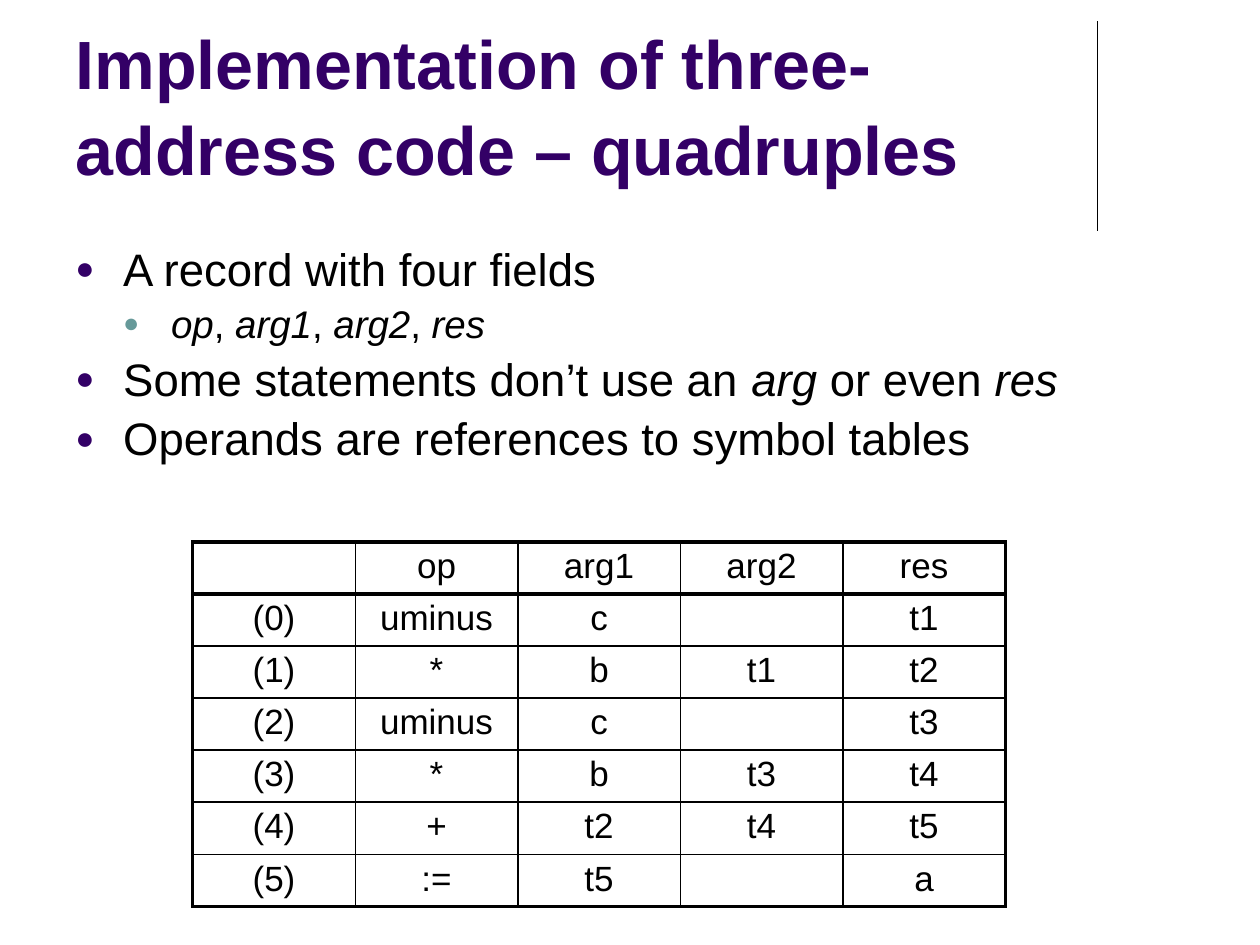
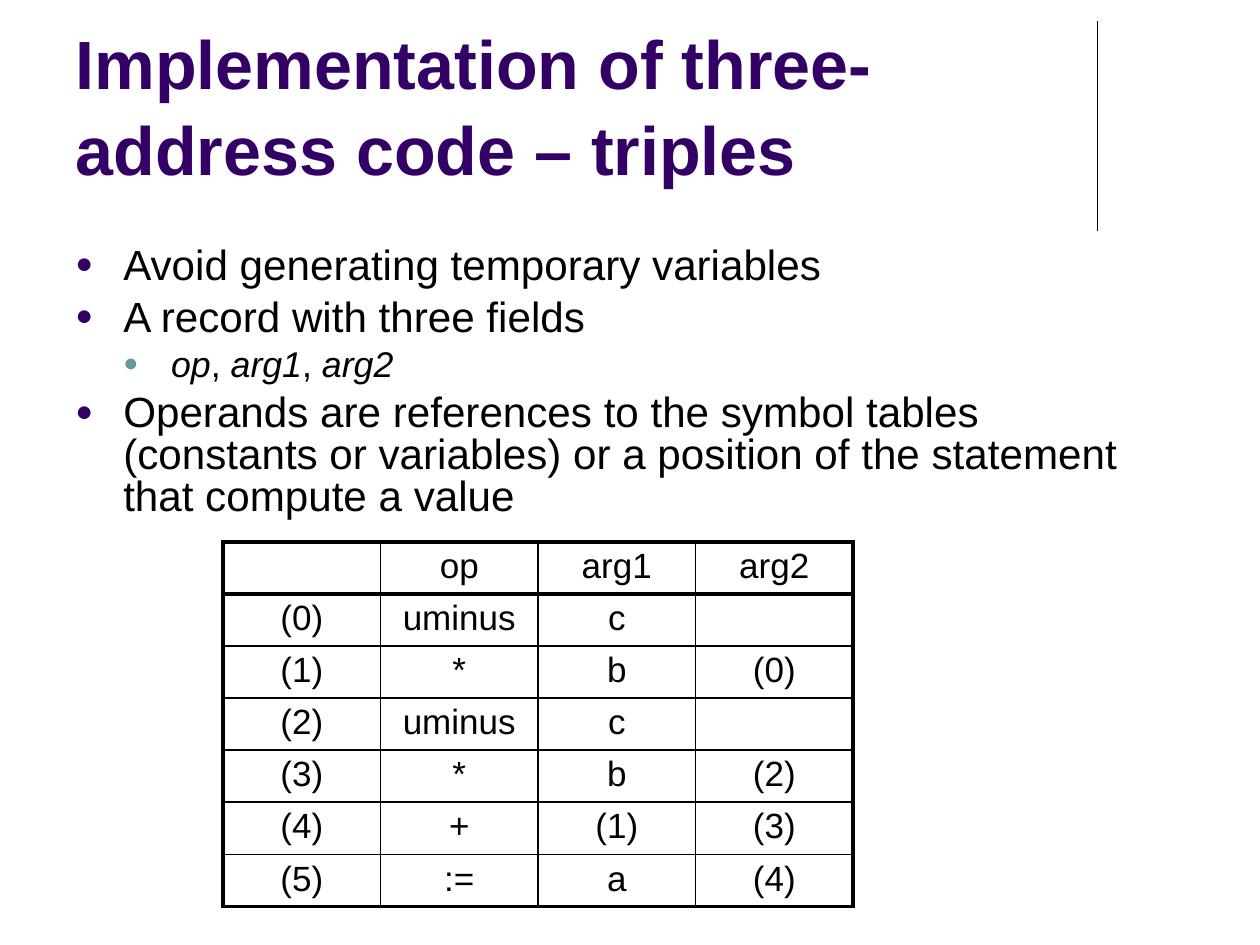
import pptx
import pptx.util
import pptx.dml.color
import pptx.enum.shapes
import pptx.enum.text
import lxml.etree

Inches = pptx.util.Inches
Pt = pptx.util.Pt
Align = pptx.enum.text.PP_ALIGN
Anchor = pptx.enum.text.MSO_ANCHOR
Fit = pptx.enum.text.MSO_AUTO_SIZE

FONT = "Arial"
INK = {"title": "330066", "text": "000000", "dots": ["330066", "669999"]}
THIN, THICK = 1, 2.25
ROW = 0.41

pages = [
    {
        "title": "Implementation of three-address code – quadruples",
        "width": 8.67,
        "high": 2.42,
        "sizes": [26, 22],
        "lead": 0.9,
        "lines": [
            (0, "A record with four fields"),
            (1, "_op_, _arg1_, _arg2_, _res_"),
            (0, "Some statements don’t use an _arg_ or even _res_"),
            (0, "Operands are references to symbol tables"),
        ],
        "left": 1.53,
        "col": 1.29,
        "rows": [
            ["", "op", "arg1", "arg2", "res"],
            ["(0)", "uminus", "c", "", "t1"],
            ["(1)", "*", "b", "t1", "t2"],
            ["(2)", "uminus", "c", "", "t3"],
            ["(3)", "*", "b", "t3", "t4"],
            ["(4)", "+", "t2", "t4", "t5"],
            ["(5)", ":=", "t5", "", "a"],
        ],
    },
    {
        "title": "Implementation of three-address code – triples",
        "width": 8.99,
        "high": 2.26,
        "sizes": [24.1, 20.4],
        "lead": 0.83,
        "lines": [
            (0, "Avoid generating temporary variables"),
            (0, "A record with three fields"),
            (1, "_op_, _arg1_, _arg2_"),
            (0, "Operands are references to the symbol tables (constants or "
                "variables) or a position of the statement that compute a value"),
        ],
        "left": 1.77,
        "col": 1.25,
        "rows": [
            ["", "op", "arg1", "arg2"],
            ["(0)", "uminus", "c", ""],
            ["(1)", "*", "b", "(0)"],
            ["(2)", "uminus", "c", ""],
            ["(3)", "*", "b", "(2)"],
            ["(4)", "+", "(1)", "(3)"],
            ["(5)", ":=", "a", "(4)"],
        ],
    },
]


def write(para, text, size, ink, bold=False, slant=False):
    run = para.add_run()
    run.text = text
    run.font.name = FONT
    run.font.size = Pt(size)
    run.font.bold = bold
    run.font.italic = slant
    run.font.color.rgb = pptx.dml.color.RGBColor.from_string(ink)


def attach(node, tag, **attrs):
    return lxml.etree.SubElement(node, pptx.oxml.ns.qn(tag), attrs)


deck = pptx.Presentation()
deck.slide_width = Inches(10)
deck.slide_height = Inches(7.5)

for page in pages:
    slide = deck.slides.add_slide(deck.slide_layouts.get_by_name("Title Only"))

    rule = slide.shapes.add_connector(
        pptx.enum.shapes.MSO_CONNECTOR.STRAIGHT,
        Inches(8.71), Inches(0.17), Inches(8.71), Inches(1.83))
    rule.line.width = Pt(0.75)
    rule.line.color.rgb = pptx.dml.color.RGBColor.from_string(INK["text"])
    attach(rule._element.spPr, "a:effectLst")

    title = slide.shapes.title
    title.left, title.top = Inches(0.5), Inches(0.13)
    title.width, title.height = Inches(8.25), Inches(1.42)
    frame = title.text_frame
    frame.auto_size = Fit.NONE
    frame.vertical_anchor = Anchor.BOTTOM
    para = frame.paragraphs[0]
    para.alignment = Align.LEFT
    para.line_spacing = 1.05
    write(para, page["title"], 39, INK["title"], bold=True)

    body = slide.shapes.add_textbox(
        Inches(0.5), Inches(1.88), Inches(page["width"]), Inches(page["high"]))
    frame = body.text_frame
    frame.word_wrap = True
    frame.margin_top = Inches(0.08)
    for num, (level, line) in enumerate(page["lines"]):
        para = frame.add_paragraph() if num else frame.paragraphs[0]
        size = page["sizes"][level]
        para.level = level
        para.line_spacing = page["lead"]
        para.space_before = Pt(0.23 * size if num else 0)
        props = para._p.get_or_add_pPr()
        props.set("marL", str(Inches(0.38 * (level + 1))))
        props.set("indent", str(Inches(-0.38)))
        attach(attach(props, "a:buClr"), "a:srgbClr", val=INK["dots"][level])
        attach(props, "a:buSzPct", val="70000")
        attach(props, "a:buFont", typeface=FONT)
        attach(props, "a:buChar", char="●")
        for turn, part in enumerate(line.split("_")):
            if part:
                write(para, part, size, INK["text"], slant=turn % 2 == 1)

    rows = page["rows"]
    high, wide = len(rows), len(rows[0])
    table = slide.shapes.add_table(
        high, wide, Inches(page["left"]), Inches(4.3),
        Inches(page["col"] * wide), Inches(ROW * high)).table
    table.first_row = False
    table.horz_banding = False
    for col in table.columns:
        col.width = Inches(page["col"])
    for r, row in enumerate(rows):
        table.rows[r].height = Inches(ROW)
        for c, text in enumerate(row):
            cell = table.cell(r, c)
            cell.margin_top = cell.margin_bottom = Inches(0.04)
            para = cell.text_frame.paragraphs[0]
            para.alignment = Align.CENTER
            if text:
                write(para, text, 20, INK["text"])
            heavy = {
                "a:lnL": c == 0,
                "a:lnR": c == wide - 1,
                "a:lnT": r < 2,
                "a:lnB": r in (0, high - 1),
            }
            props = cell._tc.get_or_add_tcPr()
            for tag, bold in heavy.items():
                edge = attach(props, tag, w=str(Pt(THICK if bold else THIN)))
                attach(attach(edge, "a:solidFill"), "a:srgbClr", val=INK["text"])
            cell.fill.background()

deck.save("out.pptx")
